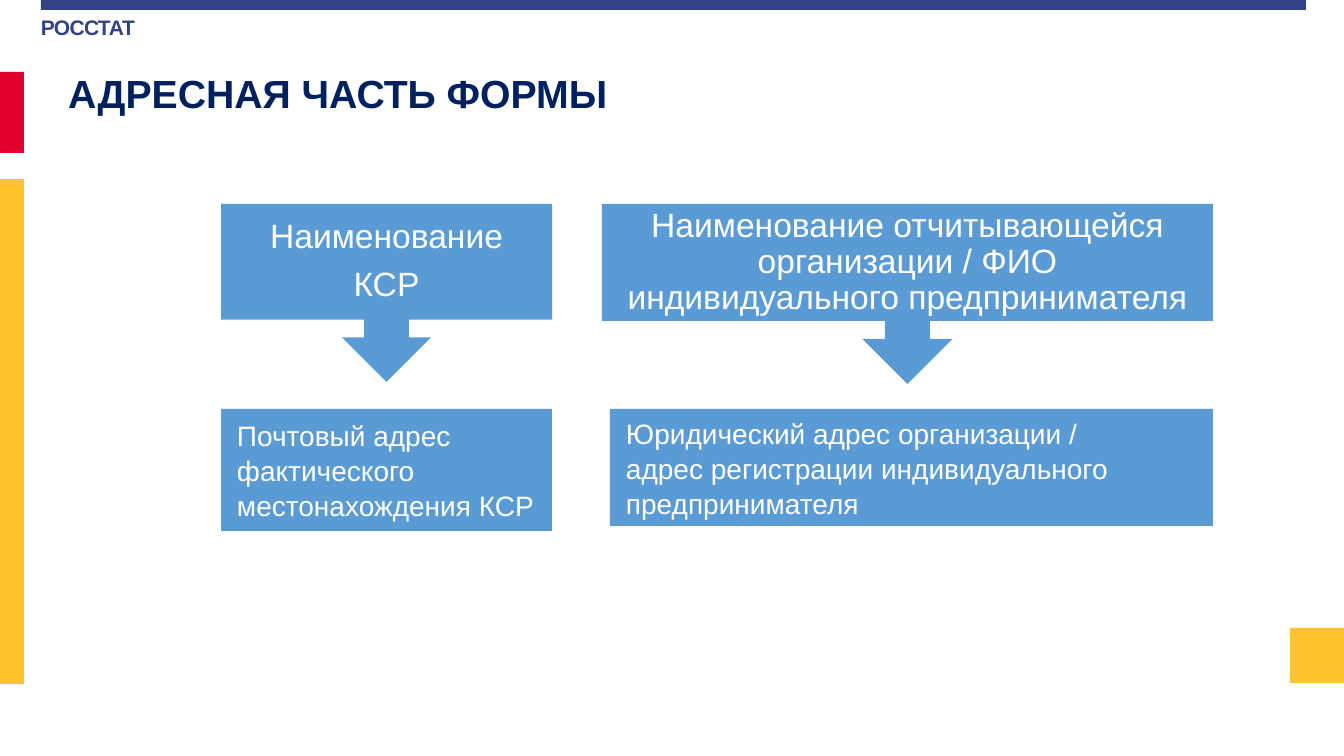
from pptx import Presentation
from pptx.dml.color import RGBColor
from pptx.enum.shapes import MSO_SHAPE
from pptx.enum.text import MSO_ANCHOR, PP_ALIGN
from pptx.util import Pt

RECTANGLE = MSO_SHAPE.RECTANGLE
ARROW_CALLOUT = MSO_SHAPE.DOWN_ARROW_CALLOUT
TOP, MIDDLE = MSO_ANCHOR.TOP, MSO_ANCHOR.MIDDLE
LEFT, CENTER = PP_ALIGN.LEFT, PP_ALIGN.CENTER

EMU_PER_PX = 12192000 / 1344
FONT = "Arial"
COLORS = {
    "header": "334286",
    "red": "E1002B",
    "yellow": "FFC32E",
    "title": "002060",
    "block": "5B9BD5",
    "white": "FFFFFF",
}


def px(length):
    return round(length * EMU_PER_PX)


def color(name):
    return RGBColor.from_string(COLORS[name])


def write_text(frame, text, size, fill, bold=False, align=LEFT, anchor=TOP,
               insets=(0, 0, 0, 0), line_spacing=None, space_after=0,
               letter_spacing=0):
    """Fill a text frame, one paragraph per line; insets go left, top, right, bottom."""
    frame.word_wrap = True
    frame.vertical_anchor = anchor
    frame.margin_left, frame.margin_top, frame.margin_right, frame.margin_bottom = map(px, insets)
    for index, line in enumerate(text.split("\n")):
        paragraph = frame.add_paragraph() if index else frame.paragraphs[0]
        paragraph.alignment = align
        paragraph.space_after = Pt(space_after)
        if line_spacing:
            paragraph.line_spacing = line_spacing
        run = paragraph.add_run()
        run.text = line
        run.font.name = FONT
        run.font.size = Pt(size)
        run.font.bold = bold
        run.font.color.rgb = color(fill)
        if letter_spacing:
            run._r.get_or_add_rPr().set("spc", str(round(letter_spacing * 100)))


def add_block(slide, box, fill, kind=RECTANGLE):
    block = slide.shapes.add_shape(kind, *map(px, box))
    block.shadow.inherit = False
    block.fill.solid()
    block.fill.fore_color.rgb = color(fill)
    block.line.fill.background()
    return block


def add_label(slide, box, text, **text_format):
    label = slide.shapes.add_textbox(*map(px, box))
    write_text(label.text_frame, text, **text_format)


def add_name_callout(slide, box, text):
    callout = add_block(slide, box, "block", ARROW_CALLOUT)
    write_text(callout.text_frame, text, size=24, fill="white", align=CENTER,
               anchor=MIDDLE, insets=(19, 19, 19, 19), line_spacing=0.9,
               space_after=8.4)


def add_address_block(slide, box, text):
    address = add_block(slide, box, "block")
    write_text(address.text_frame, text, size=20, fill="white", anchor=MIDDLE,
               insets=(16, 16, 16, 16), line_spacing=Pt(25))


def add_frame_bars(slide):
    bars = [
        ((41, 0, 1265, 10), "header"),
        ((0, 72, 24, 81), "red"),
        ((0, 179, 24, 505), "yellow"),
        ((1290, 628, 54, 55), "yellow"),
    ]
    for box, fill in bars:
        add_block(slide, box, fill)


def main():
    presentation = Presentation()
    presentation.slide_width = px(1344)
    presentation.slide_height = px(756)
    slide = presentation.slides.add_slide(presentation.slide_layouts[6])

    add_frame_bars(slide)
    add_label(slide, (40, 13, 116, 32), "РОССТАТ", size=15, fill="header",
              bold=True, insets=(1, 2, 0, 0), letter_spacing=-0.5)
    add_label(slide, (58, 60, 930, 103), "АДРЕСНАЯ ЧАСТЬ ФОРМЫ", size=28,
              fill="title", bold=True, insets=(10, 9, 10, 5))

    add_address_block(slide, (610, 409, 603, 117),
                      "Юридический адрес организации /\n"
                      "адрес регистрации индивидуального предпринимателя")
    add_address_block(slide, (221, 409, 331, 122),
                      "Почтовый адрес фактического местонахождения КСР")
    add_name_callout(slide, (602, 204, 611, 180),
                     "Наименование отчитывающейся организации / ФИО "
                     "индивидуального предпринимателя")
    add_name_callout(slide, (221, 204, 331, 178), "Наименование\nКСР")

    presentation.save("out.pptx")


if __name__ == "__main__":
    main()
